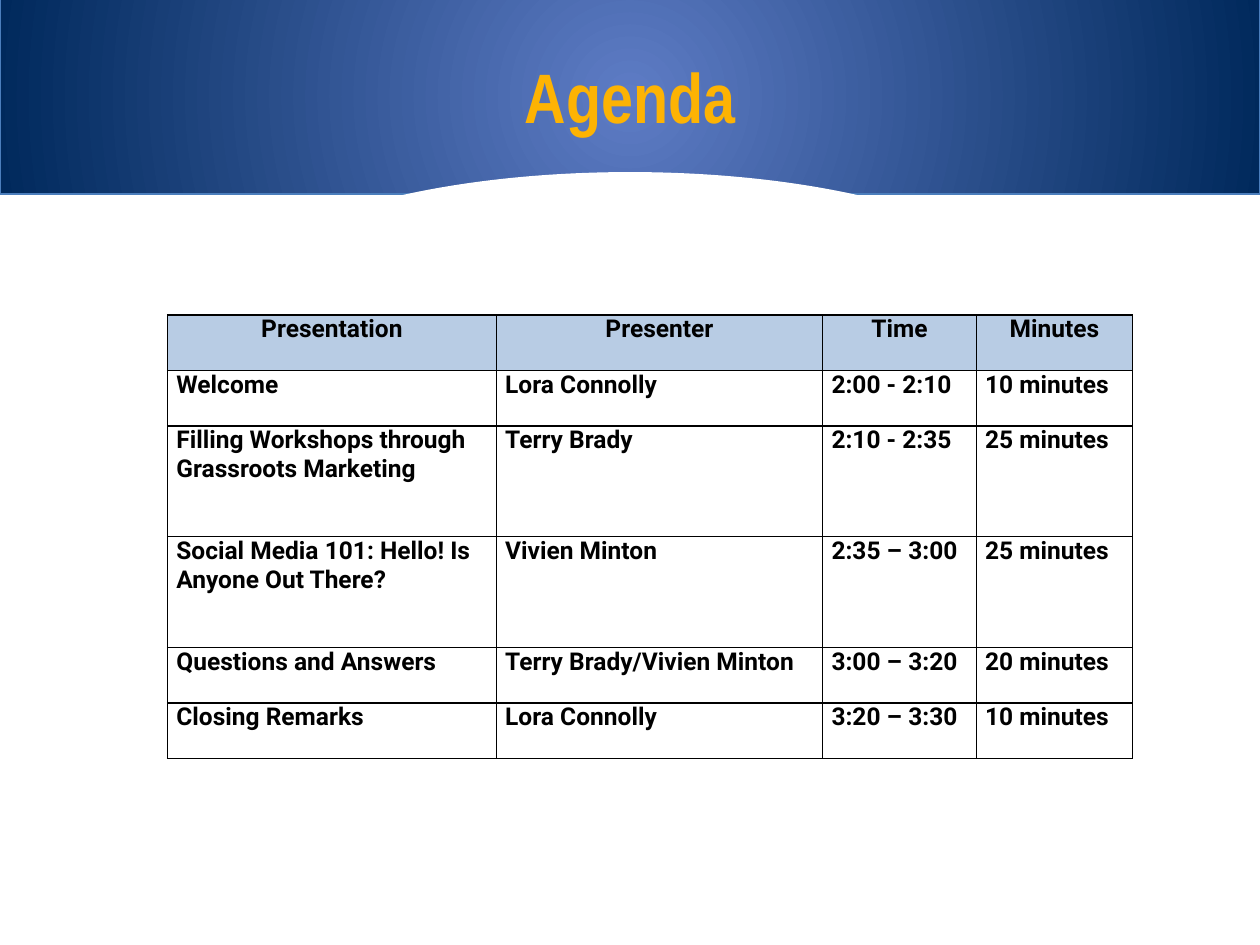
"""Build the Agenda slide: a curved gradient banner above a timetable."""
from dataclasses import dataclass

from lxml.etree import SubElement
from pptx import Presentation
from pptx.dml.color import RGBColor as Rgb
from pptx.enum.shapes import MSO_SHAPE as Preset
from pptx.enum.text import MSO_ANCHOR as Anchor, MSO_AUTO_SIZE as AutoSize, PP_ALIGN as Align
from pptx.oxml.ns import qn
from pptx.util import Inches, Pt


@dataclass(frozen=True)
class Theme:
    """Colours, fonts and sizes of the slide."""
    white: Rgb = Rgb(0xFF, 0xFF, 0xFF)
    black: Rgb = Rgb(0, 0, 0)
    gold: Rgb = Rgb(0xFD, 0xB3, 0x03)
    banner_centre: Rgb = Rgb(0x5E, 0x7C, 0xC5)
    banner_edge: Rgb = Rgb(0x00, 0x29, 0x5C)
    banner_line: Rgb = Rgb(0x4B, 0x7E, 0xBC)
    header: Rgb = Rgb(0xB8, 0xCC, 0xE4)
    title_font: str = "Arial Narrow"
    table_font: str = "Roboto"
    title_size: Pt = Pt(40)
    table_size: Pt = Pt(14)
    border: Pt = Pt(1)


@dataclass(frozen=True)
class Box:
    """A position and size in inches."""
    left: float
    top: float
    width: float
    height: float

    def lengths(self) -> tuple:
        """Return the box as slide lengths."""
        return tuple(map(Inches, (self.left, self.top, self.width, self.height)))


@dataclass(frozen=True)
class Session:
    """One row of the agenda."""
    presentation: str
    presenter: str
    time: str
    minutes: str
    height: float = 0.44

    def texts(self) -> tuple:
        """Return the cell texts in column order."""
        return self.presentation, self.presenter, self.time, self.minutes


THEME = Theme()
COLUMN_WIDTHS = (2.61, 2.59, 1.22, 1.24)
AGENDA = (
    Session("Presentation", "Presenter", "Time", "Minutes"),
    Session("Welcome", "Lora Connolly", "2:00 - 2:10", "10 minutes"),
    Session("Filling Workshops through Grassroots Marketing", "Terry Brady",
            "2:10 - 2:35", "25 minutes", 0.88),
    Session("Social Media 101: Hello! Is Anyone Out There?", "Vivien Minton",
            "2:35 – 3:00", "25 minutes", 0.88),
    Session("Questions and Answers", "Terry Brady/Vivien Minton", "3:00 – 3:20", "20 minutes"),
    Session("Closing Remarks", "Lora Connolly", "3:20 – 3:30", "10 minutes"),
)


def write(frame, text: str, font: str, size: Pt, colour: Rgb, align: Align) -> None:
    """Add one bold run to the first paragraph of a text frame."""
    paragraph = frame.paragraphs[0]
    paragraph.alignment = align
    run = paragraph.add_run()
    run.text = text
    run.font.name = font
    run.font.size = size
    run.font.bold = True
    run.font.color.rgb = colour


def add_outlined(slide, preset: Preset, box: Box, line: Rgb, width: float):
    """Add a preset shape with an outline and no shadow."""
    shape = slide.shapes.add_shape(preset, *box.lengths())
    shape.shadow.inherit = False
    shape.line.color.rgb = line
    shape.line.width = Pt(width)
    return shape


def add_banner(slide) -> None:
    """Draw the radial gradient band and the white curve cut into it."""
    band = add_outlined(slide, Preset.RECTANGLE, Box(0, -0.01, 10, 1.55), THEME.banner_line, 0.75)
    band.fill.gradient()
    for stop, colour in zip(band.fill.gradient_stops, (THEME.banner_centre, THEME.banner_edge)):
        stop.color.rgb = colour
    gradient = band.element.spPr.find(qn("a:gradFill"))
    gradient.remove(gradient.find(qn("a:lin")))
    radial = SubElement(gradient, qn("a:path"), {"path": "circle"})
    SubElement(radial, qn("a:fillToRect"), dict.fromkeys("ltrb", "50000"))

    curve = add_outlined(slide, Preset.OVAL, Box(1.75, 1.38, 6.5, 2.17), THEME.white, 2)
    curve.fill.solid()
    curve.fill.fore_color.rgb = THEME.white


def place_title(slide, text: str) -> None:
    """Format the title and bring it in front of the banner."""
    title = slide.shapes.title
    title.left, title.top, title.width, title.height = Box(0.5, 0.13, 9, 1.25).lengths()
    frame = title.text_frame
    frame.word_wrap = True
    frame.auto_size = AutoSize.NONE
    frame.vertical_anchor = Anchor.MIDDLE
    write(frame, text, THEME.title_font, THEME.title_size, THEME.gold, Align.CENTER)
    title.element.getparent().append(title.element)


def add_borders(cell) -> None:
    """Give a cell solid lines on all four sides."""
    properties = cell._tc.get_or_add_tcPr()
    for side in "LRTB":
        line = SubElement(properties, qn(f"a:ln{side}"), {"w": str(THEME.border)})
        fill = SubElement(line, qn("a:solidFill"))
        SubElement(fill, qn("a:srgbClr"), {"val": str(THEME.black)})


def fill_cell(cell, text: str, is_header: bool) -> None:
    """Write and style one agenda cell."""
    cell.margin_left = cell.margin_right = Inches(0.07)
    cell.margin_top = cell.margin_bottom = 0
    add_borders(cell)
    cell.fill.solid()
    cell.fill.fore_color.rgb = THEME.header if is_header else THEME.white
    write(cell.text_frame, text, THEME.table_font, THEME.table_size, THEME.black,
          Align.CENTER if is_header else Align.LEFT)


def add_agenda(slide, sessions: tuple) -> None:
    """Draw the timetable with the first session as its header."""
    box = Box(1.33, 2.5, sum(COLUMN_WIDTHS), sum(session.height for session in sessions))
    agenda = slide.shapes.add_table(len(sessions), len(COLUMN_WIDTHS), *box.lengths()).table
    agenda.horz_banding = False
    for column, width in zip(agenda.columns, COLUMN_WIDTHS):
        column.width = Inches(width)
    for index, (row, session) in enumerate(zip(agenda.rows, sessions)):
        row.height = Inches(session.height)
        for cell, text in zip(row.cells, session.texts()):
            fill_cell(cell, text, index == 0)


def main() -> None:
    """Build and save the slide."""
    deck = Presentation()
    deck.slide_width, deck.slide_height = Inches(10), Inches(7.5)
    slide = deck.slides.add_slide(deck.slide_layouts[5])
    add_banner(slide)
    place_title(slide, "Agenda")
    add_agenda(slide, AGENDA)
    deck.save("out.pptx")


if __name__ == "__main__":
    main()
